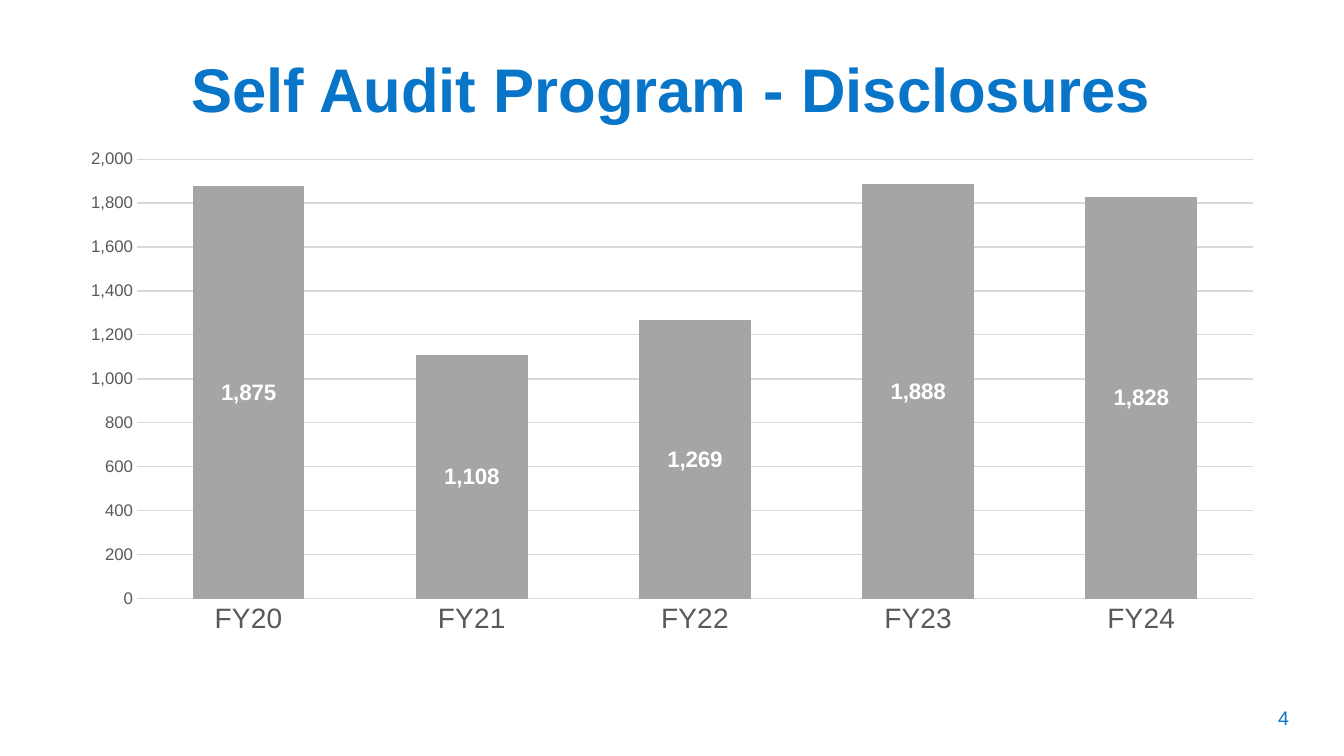
"""Build the Self Audit Program disclosures slide with its column chart."""
from lxml import etree
from pptx import Presentation
from pptx import util as u
from pptx.chart.data import CategoryChartData
from pptx.dml.color import RGBColor
from pptx.enum import chart as charts, text
from pptx.oxml import ns

TITLE = "Self Audit Program - Disclosures"
PAGE_NUMBER = "4"
DISCLOSURES = {"FY20": 1875, "FY21": 1108, "FY22": 1269, "FY23": 1888, "FY24": 1828}

FONT = "Arial"
NUMBER_FORMAT = "#,##0"
BLUE = RGBColor(0x08, 0x75, 0xC8)
BAR_GRAY = RGBColor(0xA5, 0xA5, 0xA5)
AXIS_GRAY = RGBColor(0x59, 0x59, 0x59)
LINE_GRAY = RGBColor(0xD9, 0xD9, 0xD9)
WHITE = RGBColor(0xFF, 0xFF, 0xFF)

SLIDE_SIZE = (960, 540)
TITLE_BOX = (49.7, 38.9, 860.4, 104.4)
NUMBER_BOX = (884.9, 500.4, 64, 28.8)
CHART_BOX = (48.2, 100.8, 864, 360)
PLOT_BOX = (97.9, 113.6, 797.1, 314.3)


def style_font(font, size, color, bold=False):
    font.name = FONT
    font.size = u.Pt(size)
    font.color.rgb = color
    font.bold = bold


def add_label(slide, box, content, size, bold=False, spacing=1.0):
    shape = slide.shapes.add_textbox(*map(u.Pt, box))
    frame = shape.text_frame
    frame.word_wrap = True
    frame.vertical_anchor = text.MSO_ANCHOR.TOP
    paragraph = frame.paragraphs[0]
    paragraph.alignment = text.PP_ALIGN.CENTER
    paragraph.line_spacing = spacing
    run = paragraph.add_run()
    run.text = content
    style_font(run.font, size, BLUE, bold)


def style_line(line):
    line.color.rgb = LINE_GRAY
    line.width = u.Pt(0.75)


def place_plot(chart):
    plot_area = chart.plots[0]._element.getparent()
    for layout in plot_area.findall(ns.qn("c:layout")):
        plot_area.remove(layout)
    layout = etree.Element(ns.qn("c:layout"))
    manual = etree.SubElement(layout, ns.qn("c:manualLayout"))
    left, top, width, height = CHART_BOX
    plot_left, plot_top, plot_width, plot_height = PLOT_BOX
    settings = {
        "layoutTarget": "inner", "xMode": "edge", "yMode": "edge",
        "x": (plot_left - left) / width, "y": (plot_top - top) / height,
        "w": plot_width / width, "h": plot_height / height,
    }
    for name, value in settings.items():
        etree.SubElement(manual, ns.qn(f"c:{name}")).set("val", str(value))
    plot_area.insert(0, layout)


def add_disclosure_chart(slide):
    data = CategoryChartData(number_format=NUMBER_FORMAT)
    data.categories = list(DISCLOSURES)
    data.add_series("Series 1", list(DISCLOSURES.values()))
    chart = slide.shapes.add_chart(
        charts.XL_CHART_TYPE.COLUMN_STACKED, *map(u.Pt, CHART_BOX), data).chart
    chart.has_legend = False
    chart.has_title = False
    style_font(chart.font, 10, AXIS_GRAY)

    for axis, size in ((chart.category_axis, 20), (chart.value_axis, 12)):
        axis.major_tick_mark = charts.XL_TICK_MARK.NONE
        axis.minor_tick_mark = charts.XL_TICK_MARK.NONE
        style_font(axis.tick_labels.font, size, AXIS_GRAY)
    style_line(chart.category_axis.format.line)

    values = chart.value_axis
    values.minimum_scale, values.maximum_scale, values.major_unit = 0, 2000, 200
    values.format.line.fill.background()
    values.tick_labels.number_format = NUMBER_FORMAT
    values.tick_labels.number_format_is_linked = False
    values.has_major_gridlines = True
    style_line(values.major_gridlines.format.line)

    plot = chart.plots[0]
    plot.gap_width = 100
    plot.overlap = -10
    plot.vary_by_categories = False
    series = plot.series[0]
    series.format.fill.solid()
    series.format.fill.fore_color.rgb = BAR_GRAY
    labels = series.data_labels
    labels.show_value = True
    labels.position = charts.XL_LABEL_POSITION.CENTER
    labels.number_format = NUMBER_FORMAT
    labels.number_format_is_linked = False
    style_font(labels.font, 16, WHITE, bold=True)
    place_plot(chart)


def main():
    presentation = Presentation()
    presentation.slide_width, presentation.slide_height = map(u.Pt, SLIDE_SIZE)
    slide = presentation.slides.add_slide(presentation.slide_layouts[6])
    add_label(slide, NUMBER_BOX, PAGE_NUMBER, 14)
    add_label(slide, TITLE_BOX, TITLE, 44, bold=True, spacing=0.9)
    add_disclosure_chart(slide)
    presentation.save("out.pptx")


if __name__ == "__main__":
    main()
